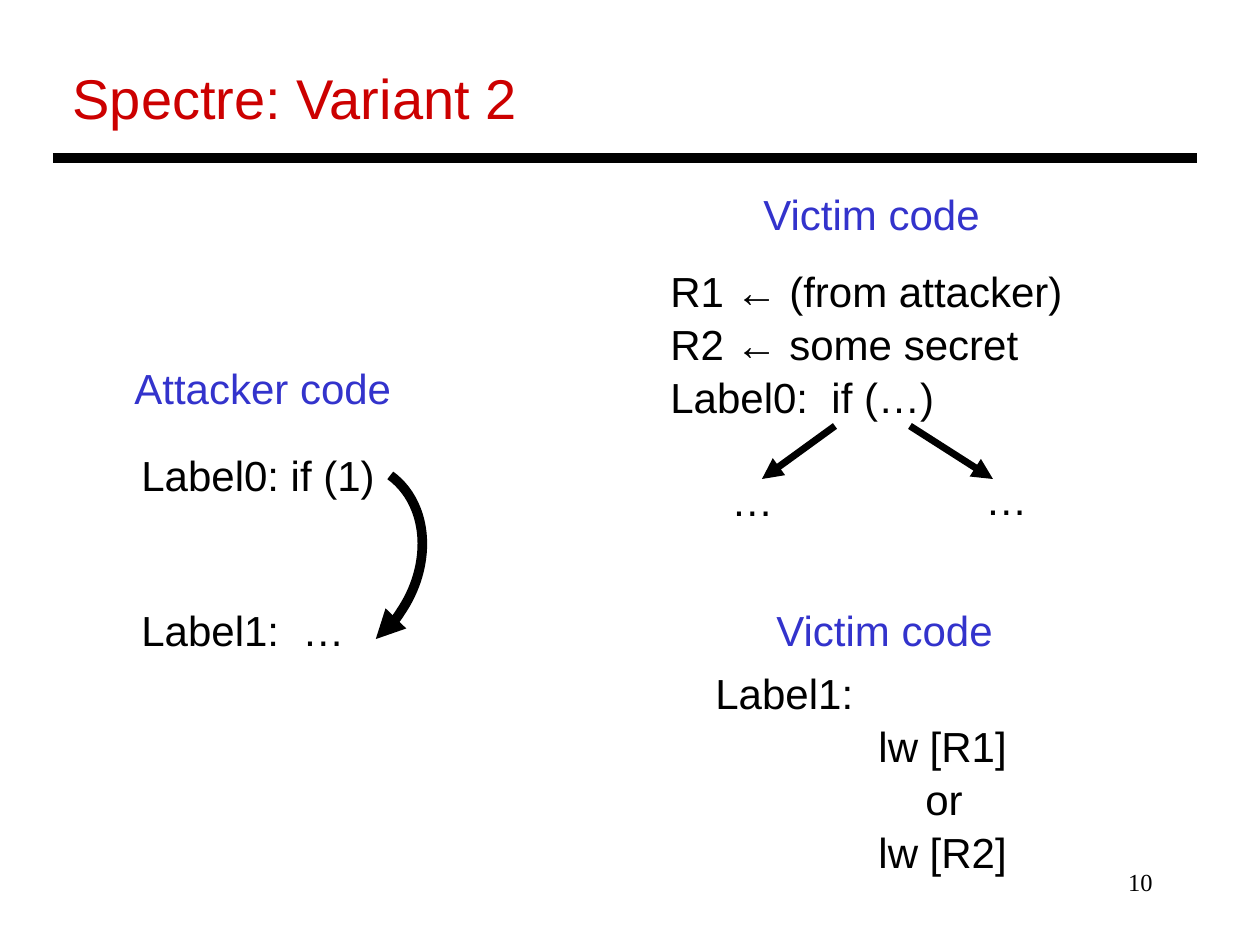
from lxml.etree import SubElement
from pptx import Presentation
from pptx.dml.color import RGBColor
from pptx.enum.shapes import MSO_CONNECTOR, MSO_SHAPE
from pptx.enum.text import MSO_ANCHOR, PP_ALIGN
from pptx.oxml.ns import qn
from pptx.util import Pt

BLACK = RGBColor(0x00, 0x00, 0x00)
RED = RGBColor(0xCC, 0x00, 0x00)
BLUE = RGBColor(0x33, 0x33, 0xCC)

SCALE = 914400 / 126  # EMU per px

TITLE = ("Spectre: Variant 2", (60, 54, 474, 81))
PAGE = ("10", (903, 861, 262, 63))

HEADS = [
    ("Victim code", (751, 180, 256, 64)),
    ("Victim code", (764, 596, 256, 64)),
    ("Attacker code", (122, 354, 296, 64)),
]

# Each line of code: text, indent in px, blank space above in pt
CODE = [
    ((658, 257, 421, 165), [
        ("R1 ← (from attacker)", 0, 0),
        ("R2 ← some secret", 0, 0),
        ("Label0:  if (…)", 0, 0),
    ]),
    ((719, 466, 79, 64), [("…", 0, 0)]),
    ((973, 465, 79, 64), [("…", 0, 0)]),
    ((703, 659, 319, 217), [
        ("Label1:", 0, 0),
        ("lw [R1]", 163, 0),
        ("or", 210, 0),
        ("lw [R2]", 163, 0),
    ]),
    ((129, 441, 261, 217), [
        ("Label0: if (1)", 0, 0),
        ("Label1:  …", 0, 58),
    ]),
]

# Start, end, width in pt, arrowhead
LINES = [
    ((53, 158), (1197, 158), 6, False),
    ((835, 426), (762, 479), 4, True),
    ((910, 426), (993, 479), 4, True),
]

JUMP = (242, 456, 174, 213)


def emu(vals):
    return [round(v * SCALE) for v in vals]


def fill(shape, lines, size, color, font="Arial", align=PP_ALIGN.LEFT, pitch=1.05):
    """Write (text, indent, space above) lines into a shape."""
    frame = shape.text_frame
    frame.word_wrap = True
    frame.vertical_anchor = MSO_ANCHOR.TOP
    for i, (text, indent, above) in enumerate(lines):
        para = frame.paragraphs[0] if i == 0 else frame.add_paragraph()
        para.text = text
        para.alignment = align
        para.line_spacing = pitch
        para.space_before = Pt(above)
        para.font.name = font
        para.font.size = Pt(size)
        para.font.color.rgb = color
        if indent:
            para._p.get_or_add_pPr().set("marL", str(round(indent * SCALE)))


def stroke(shape, width, head):
    shape.line.color.rgb = BLACK
    shape.line.width = Pt(width)
    if head:
        SubElement(shape.line._get_or_add_ln(), qn("a:tailEnd"), type="triangle")


def main():
    deck = Presentation()
    deck.slide_width, deck.slide_height = emu((1260, 945))
    slide = deck.slides.add_slide(deck.slide_layouts[5])
    shapes = slide.shapes

    text, box = TITLE
    title = shapes.title
    title.left, title.top, title.width, title.height = emu(box)
    fill(title, [(text, 0, 0)], 32, RED)

    text, box = PAGE
    fill(shapes.add_textbox(*emu(box)), [(text, 0, 0)], 14, BLACK,
         "Times New Roman", PP_ALIGN.RIGHT, 1)

    for text, box in HEADS:
        fill(shapes.add_textbox(*emu(box)), [(text, 0, 0)], 24, BLUE)
    for box, lines in CODE:
        fill(shapes.add_textbox(*emu(box)), lines, 24, BLACK)

    for start, end, width, head in LINES:
        line = shapes.add_connector(MSO_CONNECTOR.STRAIGHT, *emu(start + end))
        stroke(line, width, head)
        SubElement(line._element.spPr, qn("a:effectLst"))

    jump = shapes.add_shape(MSO_SHAPE.ARC, *emu(JUMP))
    jump.adjustments[0] = 163.09
    jump.adjustments[1] = 15.18
    jump.rotation = 33.3
    jump.fill.background()
    jump.shadow.inherit = False
    stroke(jump, 5.5, True)

    deck.save("out.pptx")


if __name__ == "__main__":
    main()
